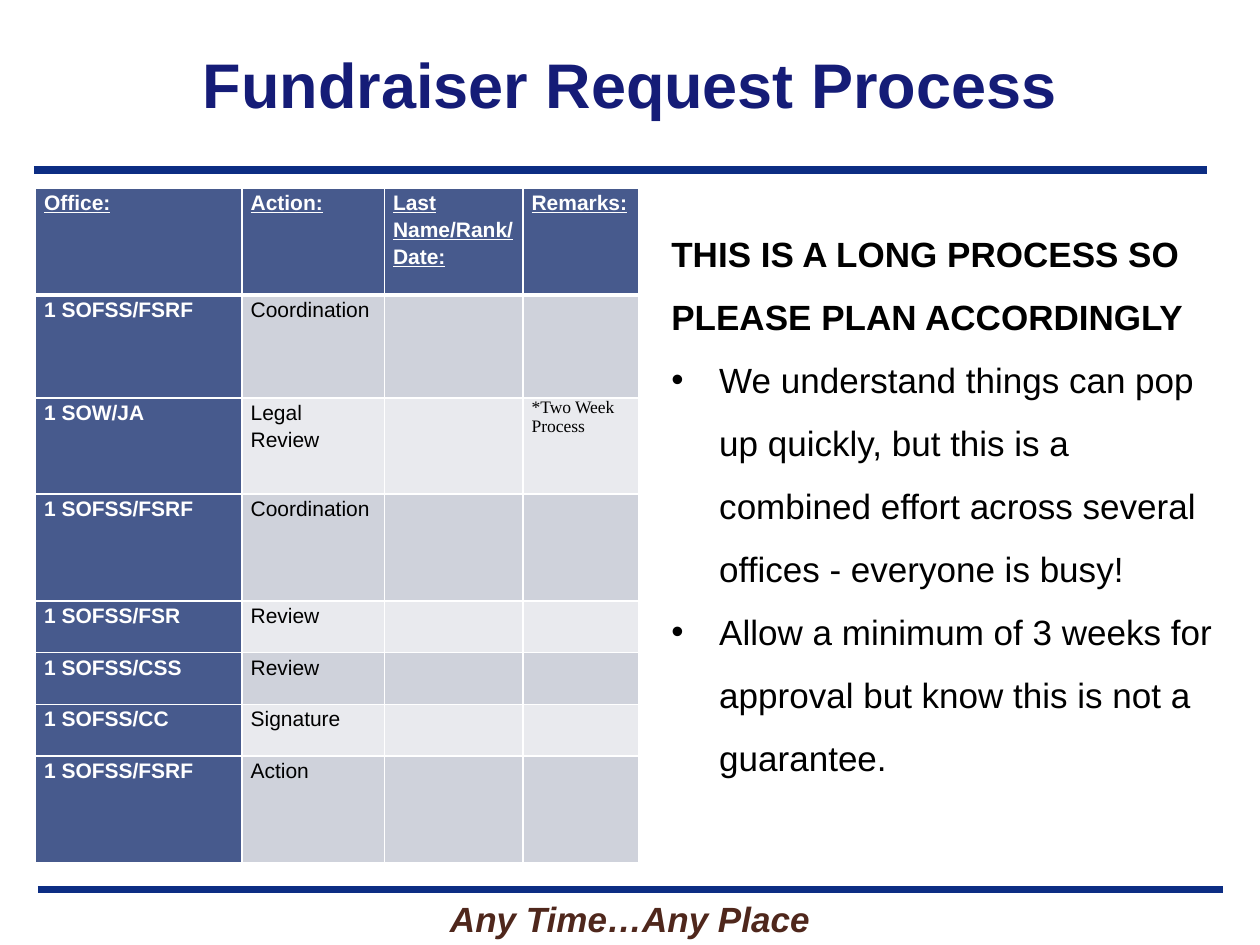
from lxml import etree
from pptx import Presentation
from pptx.dml.color import RGBColor
from pptx.enum.shapes import MSO_CONNECTOR
from pptx.enum.text import MSO_ANCHOR, PP_ALIGN
from pptx.oxml.ns import qn
from pptx.util import Inches, Pt

LEFT, CENTER = PP_ALIGN.LEFT, PP_ALIGN.CENTER
TOP, MIDDLE = MSO_ANCHOR.TOP, MSO_ANCHOR.MIDDLE
STRAIGHT = MSO_CONNECTOR.STRAIGHT

# Content
TITLE = "Fundraiser Request Process"
MOTTO = "Any Time…Any Place"
WARNING = "THIS IS A LONG PROCESS SO PLEASE PLAN ACCORDINGLY"
ADVICE = [
    "We understand things can pop up quickly, but this is a combined effort "
    "across several offices - everyone is busy!",
    "Allow a minimum of 3 weeks for approval but know this is not a guarantee.",
]
HEADERS = ["Office:", "Action:", "Last Name/Rank/Date:", "Remarks:"]
STEPS = [  # office, action, name, remarks, row height
    ("1 SOFSS/FSRF", "Coordination", "", "", 0.82),
    ("1 SOW/JA", "Legal Review", "", "*Two Week Process", 0.76),
    ("1 SOFSS/FSRF", "Coordination", "", "", 0.85),
    ("1 SOFSS/FSR", "Review", "", "", 0.41),
    ("1 SOFSS/CSS", "Review", "", "", 0.41),
    ("1 SOFSS/CC", "Signature", "", "", 0.41),
    ("1 SOFSS/FSRF", "Action", "", "", 0.85),
]
HEADER_HEIGHT = 0.85
COLUMN_WIDTHS = [1.64, 1.13, 1.1, 0.92]
RULES = [(0.27, 9.58, 1.35), (0.3, 9.71, 7.06)]  # left, right, y

RULE_BLUE, TITLE_BLUE, HEADER_BLUE = "0C2D83", "151C77", "475A8D"
BROWN, BLACK, WHITE = "4F271C", "000000", "FFFFFF"
BANDS = ["CFD2DB", "E9EAEE"]


def color(value):
    return RGBColor.from_string(value)


def write(frame, text, size=20, font="Arial", ink=BLACK, bold=False, italic=False,
          underline=False, align=LEFT, spacing=None, bullet=False):
    """Fill the frame's empty first paragraph, or add a paragraph after it."""
    para = frame.paragraphs[0]
    if para.runs:
        para = frame.add_paragraph()
    if bullet:
        props = para._p.get_or_add_pPr()
        props.set("marL", str(Inches(0.38)))
        props.set("indent", str(Inches(-0.38)))
        etree.SubElement(props, qn("a:buFont")).set("typeface", "Arial")
        etree.SubElement(props, qn("a:buChar")).set("char", "•")
    para.alignment = align
    if spacing:
        para.line_spacing = spacing
    span = para.add_run()
    span.text = text
    span.font.size = Pt(size)
    span.font.name = font
    span.font.bold = bold
    span.font.italic = italic
    span.font.underline = underline
    span.font.color.rgb = color(ink)


def add_box(page, left, top, width, height, anchor=TOP):
    box = page.shapes.add_textbox(Inches(left), Inches(top), Inches(width), Inches(height))
    box.text_frame.word_wrap = True
    box.text_frame.vertical_anchor = anchor
    return box.text_frame


def add_rule(page, left, right, y):
    rule = page.shapes.add_connector(STRAIGHT, Inches(left), Inches(y), Inches(right), Inches(y))
    rule.line.color.rgb = color(RULE_BLUE)
    rule.line.width = Pt(4.5)
    etree.SubElement(rule._element.spPr, qn("a:effectLst"))


def style_cell(cell, fill, top=1, bottom=1):
    props = cell._tc.get_or_add_tcPr()
    for side, width in (("L", 1), ("R", 1), ("T", top), ("B", bottom)):
        border = etree.SubElement(props, qn(f"a:ln{side}"), w=str(Pt(width)))
        paint = etree.SubElement(border, qn("a:solidFill"))
        etree.SubElement(paint, qn("a:srgbClr"), val=WHITE)
    cell.fill.solid()
    cell.fill.fore_color.rgb = color(fill)
    cell.margin_left = cell.margin_right = Inches(0.07)
    cell.margin_top = cell.margin_bottom = 0


def add_routing_table(page):
    heights = [HEADER_HEIGHT] + [step[-1] for step in STEPS]
    table = page.shapes.add_table(
        len(heights), len(HEADERS), Inches(0.28), Inches(1.49),
        Inches(sum(COLUMN_WIDTHS)), Inches(sum(heights))).table
    table.horz_banding = False
    for column, width in zip(table.columns, COLUMN_WIDTHS):
        column.width = Inches(width)
    for row, height in zip(table.rows, heights):
        row.height = Inches(height)

    for column, text in enumerate(HEADERS):
        cell = table.cell(0, column)
        style_cell(cell, HEADER_BLUE, bottom=3)
        write(cell.text_frame, text, size=12, ink=WHITE, bold=True, underline=True, spacing=1.15)

    for row, step in enumerate(STEPS, start=1):
        for column, text in enumerate(step[:-1]):
            cell = table.cell(row, column)
            office, remark = column == 0, column == 3
            style_cell(cell, HEADER_BLUE if office else BANDS[(row - 1) % 2],
                       top=3 if row == 1 else 1)
            if remark and text:
                write(cell.text_frame, text, size=10, font="Times New Roman")
            elif text:
                write(cell.text_frame, text, size=12, ink=WHITE if office else BLACK,
                      bold=office, spacing=1.15)


def main():
    deck = Presentation()
    deck.slide_width, deck.slide_height = Inches(10), Inches(7.5)
    page = deck.slides.add_slide(deck.slide_layouts[6])

    # Rules and motto
    for rule in RULES:
        add_rule(page, *rule)
    write(add_box(page, 3.03, 7.07, 3.94, 0.43), MOTTO,
          ink=BROWN, bold=True, italic=True, align=CENTER)

    # Advice beside the table
    advice = add_box(page, 5.23, 1.63, 4.52, 5.09)
    write(advice, WARNING, bold=True, spacing=1.5)
    for text in ADVICE:
        write(advice, text, spacing=1.5, bullet=True)

    # Title and table
    write(add_box(page, 0.41, 0.11, 9.18, 1.11, anchor=MIDDLE), TITLE,
          size=36, ink=TITLE_BLUE, bold=True, align=CENTER)
    add_routing_table(page)
    deck.save("out.pptx")


if __name__ == "__main__":
    main()
